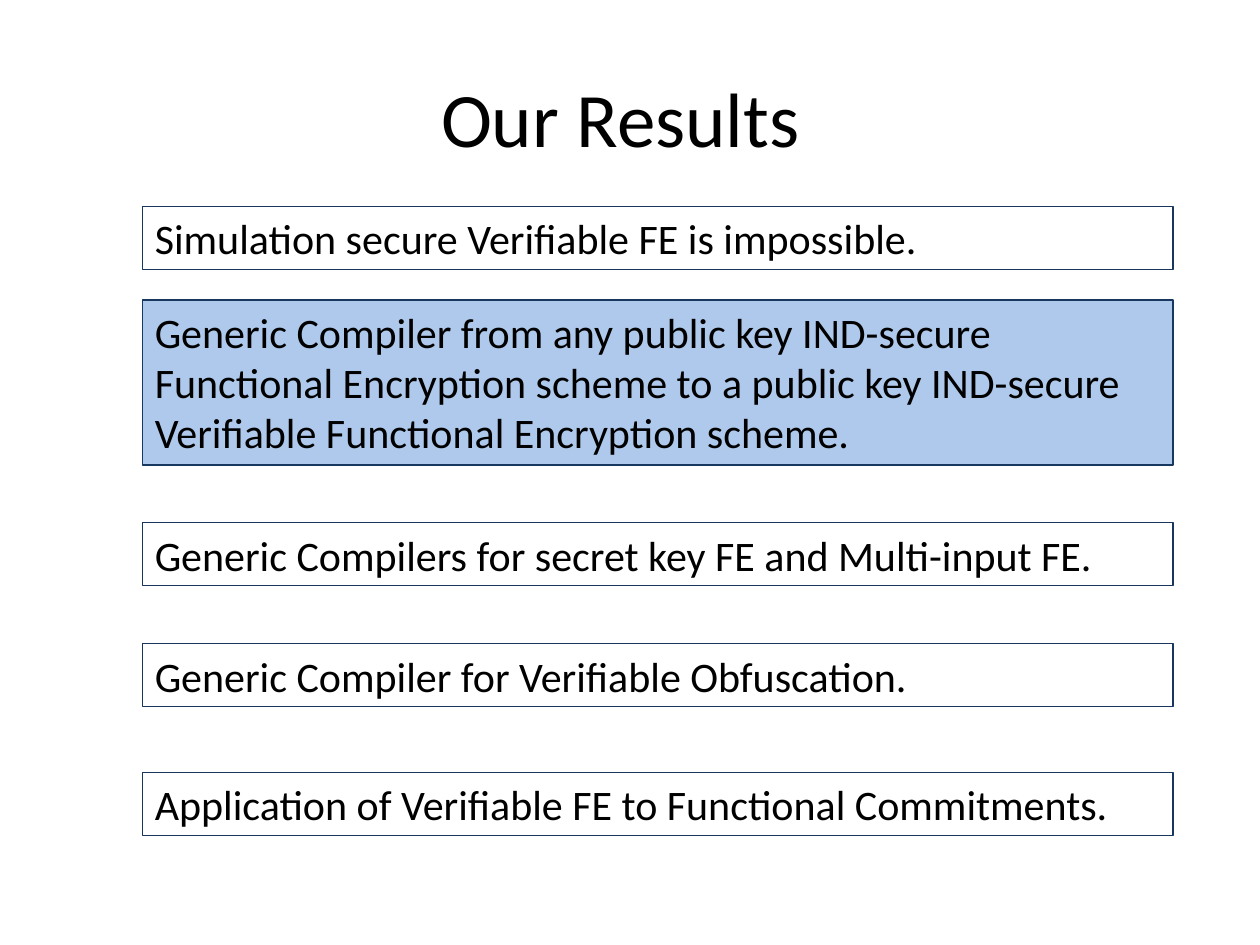
import dataclasses

import lxml.etree
import pptx
import pptx.dml.color
import pptx.enum.shapes
import pptx.enum.text
import pptx.oxml.ns
import pptx.util

Inches = pptx.util.Inches


@dataclasses.dataclass(frozen=True)
class Theme:
    font: str = "Calibri"
    text: str = "000000"
    border: str = "17375E"
    highlight: str = "8EB4E3"
    highlight_opacity: int = 71
    title_size: int = 44
    body_size: int = 24
    line_width: float = 0.75


def rgb(value):
    return pptx.dml.color.RGBColor.from_string(value)


class Deck:
    """Hold the theme and the current slide, and add styled elements to it."""

    def __init__(self, prs, theme):
        self.theme = theme
        self.s = prs.slides.add_slide(prs.slide_layouts[5])

    def set_text(self, tf, text, size, align, anchor):
        tf.word_wrap = True
        tf.vertical_anchor = anchor
        p = tf.paragraphs[0]
        p.text = text
        p.alignment = align
        p.font.name = self.theme.font
        p.font.size = pptx.util.Pt(size)
        p.font.color.rgb = rgb(self.theme.text)

    def title(self, text, left, top, width, height):
        sp = self.s.shapes.title
        sp.left, sp.top = Inches(left), Inches(top)
        sp.width, sp.height = Inches(width), Inches(height)
        self.set_text(sp.text_frame, text, self.theme.title_size,
                      pptx.enum.text.PP_ALIGN.CENTER, pptx.enum.text.MSO_ANCHOR.MIDDLE)

    def result(self, text, left, top, width, height, highlighted=False):
        sp = self.s.shapes.add_shape(
            pptx.enum.shapes.MSO_SHAPE.RECTANGLE,
            Inches(left), Inches(top), Inches(width), Inches(height))
        sp.shadow.inherit = False
        sp.line.color.rgb = rgb(self.theme.border)
        sp.line.width = pptx.util.Pt(self.theme.line_width)
        if highlighted:
            self.highlight(sp)
        else:
            sp.fill.background()
        self.set_text(sp.text_frame, text, self.theme.body_size,
                      pptx.enum.text.PP_ALIGN.LEFT, pptx.enum.text.MSO_ANCHOR.TOP)
        sp.text_frame.auto_size = pptx.enum.text.MSO_AUTO_SIZE.SHAPE_TO_FIT_TEXT

    def highlight(self, sp):
        qn = pptx.oxml.ns.qn
        sp.fill.solid()
        sp.fill.fore_color.rgb = rgb(self.theme.highlight)
        color = sp._element.spPr.find(qn("a:solidFill")).find(qn("a:srgbClr"))
        alpha = lxml.etree.SubElement(color, qn("a:alpha"))
        alpha.set("val", str(self.theme.highlight_opacity * 1000))


def main():
    prs = pptx.Presentation()
    prs.slide_width, prs.slide_height = Inches(10), Inches(7.5)
    deck = Deck(prs, Theme())
    deck.title("Our Results\t", 0.5, 0.3, 9, 1.25)

    left, width, row_height = 1.13, 8.18, 0.5
    deck.result(
        "Generic Compiler from any public key IND-secure Functional Encryption "
        "scheme to a public key IND-secure Verifiable Functional Encryption scheme.",
        left, 2.38, width, 1.31, highlighted=True)
    results = [
        (4.15, "Generic Compilers for secret key FE and Multi-input FE."),
        (5.11, "Generic Compiler for Verifiable Obfuscation."),
        (6.13, "Application of Verifiable FE to Functional Commitments."),
        (1.64, "Simulation secure Verifiable FE is impossible."),
    ]
    for top, text in results:
        deck.result(text, left, top, width, row_height)
    prs.save("out.pptx")


if __name__ == "__main__":
    main()
